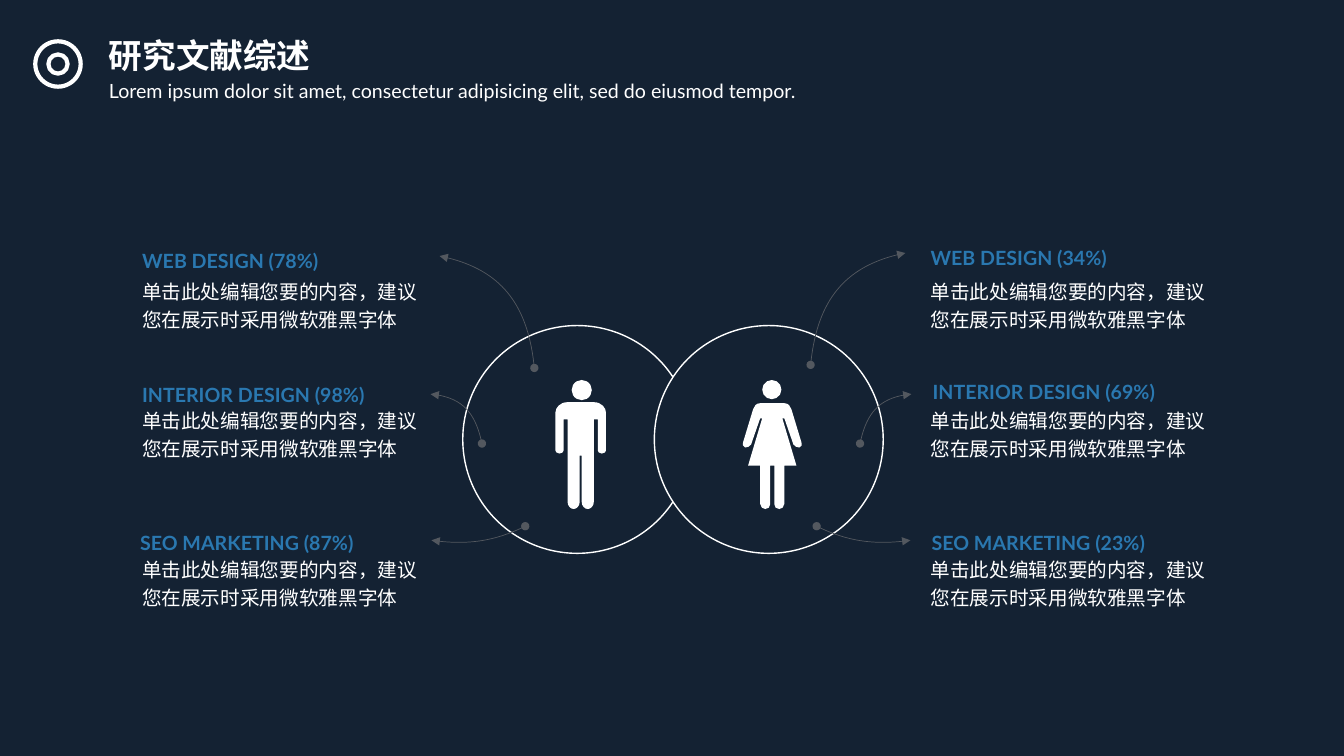
from dataclasses import dataclass
from lxml import etree
from pptx import Presentation
from pptx.dml.color import RGBColor
from pptx.enum.shapes import MSO_SHAPE
from pptx.enum.text import MSO_ANCHOR, MSO_AUTO_SIZE, PP_ALIGN
from pptx.oxml.ns import qn
from pptx.util import Inches, Pt

OVAL = MSO_SHAPE.OVAL
TOP, MIDDLE = MSO_ANCHOR.TOP, MSO_ANCHOR.MIDDLE
LEFT, NO_FIT = PP_ALIGN.LEFT, MSO_AUTO_SIZE.NONE


@dataclass(frozen=True)
class Theme:
    font: str = "Lato"
    navy: RGBColor = RGBColor(0x14, 0x22, 0x33)
    white: RGBColor = RGBColor(0xFF, 0xFF, 0xFF)
    blue: RGBColor = RGBColor(0x2A, 0x78, 0xB0)
    grey: RGBColor = RGBColor(0x53, 0x58, 0x5F)
    title: int = 24
    text: int = 14
    leading: float = 1.2


T = Theme()
WIDTH, HEIGHT = 13.33, 7.5
TITLE = "研究文献综述"
SUBTITLE = "Lorem ipsum dolor sit amet, consectetur adipisicing elit, sed do eiusmod tempor."
BODY = "单击此处编辑您要的内容，建议您在展示时采用微软雅黑字体"

ROW_TOPS = (2.73, 4.01, 5.49)
COLUMNS = (
    (1.41, (("WEB DESIGN (78%)", 1.28, 2.37),
            ("INTERIOR DESIGN (98%)", 1.28, 3.7),
            ("SEO MARKETING (87%)", 1.26, 5.17))),
    (9.23, (("WEB DESIGN (34%)", 9.1, 2.34),
            ("INTERIOR DESIGN (69%)", 9.12, 3.67),
            ("SEO MARKETING (23%)", 9.11, 5.17))),
)
BODY_SIZE, LABEL_SIZE = (2.76, 0.54), (2.66, 0.38)
LABEL_INSETS = (0.13, 0.07)

CIRCLES = ((4.59, 3.23, 2.27, 2.26), (6.49, 3.23, 2.27, 2.26))
HEADS = ((5.67, 3.77, 0.2, 0.2), (7.56, 3.77, 0.19, 0.19))
ICON_RINGS = ((0.35, 0.41, 0.45, 0.45), (0.48, 0.54, 0.19, 0.19))

HALF_BODIES = (
    (5.76, ((0.13, 3.99), (0.21, 3.99, 0.25, 4.05, 0.25, 4.09), (0.25, 4.47),
            (0.25, 4.48, 0.24, 4.5, 0.21, 4.5), (0.18, 4.5, 0.17, 4.48, 0.17, 4.47),
            (0.17, 4.16), (0.13, 4.16), (0.13, 4.98),
            (0.13, 5.02, 0.1, 5.05, 0.07, 5.05), (0.04, 5.05, 0.01, 5.02, 0.01, 4.98),
            (0.01, 4.52))),
    (7.66, ((0.12, 4), (0.16, 4, 0.18, 4.03, 0.19, 4.06), (0.29, 4.39),
            (0.3, 4.41, 0.29, 4.43, 0.27, 4.44), (0.25, 4.44, 0.22, 4.43, 0.21, 4.41),
            (0.12, 4.15), (0.1, 4.15), (0.24, 4.62), (0.12, 4.62), (0.12, 5),
            (0.12, 5.03, 0.09, 5.05, 0.07, 5.05), (0.04, 5.05, 0.02, 5.03, 0.02, 5),
            (0.02, 4.62))),
)
ARROWS = (
    (((5.3, 3.65), (5.24, 3.02, 4.93, 2.65, 4.36, 2.54)), 13.34, -0.03),
    (((4.78, 4.4), (4.72, 4.1, 4.55, 3.93, 4.27, 3.91)), 13.31, 0),
    (((5.21, 5.22), (4.93, 5.36, 4.62, 5.41, 4.28, 5.36)), 13.31, 0),
)


def pairs(seg):
    return list(zip(seg[::2], seg[1::2]))


def mirrored(segments, axis, shift=0):
    return [tuple(v for x, y in pairs(seg) for v in (axis - x, y + shift))
            for seg in segments]


def reversed_path(segments):
    points = [pt for seg in segments for pt in pairs(seg)][::-1]
    lengths = [1] + [len(seg) // 2 for seg in segments[:0:-1]]
    path = []
    for n in lengths:
        path.append(tuple(v for pt in points[:n] for v in pt))
        points = points[n:]
    return path


def paint(sp, fill=None, line=None, width=1):
    sp.shadow.inherit = False
    if fill is None:
        sp.fill.background()
    else:
        sp.fill.solid()
        sp.fill.fore_color.rgb = fill
    if line is None:
        sp.line.fill.background()
    else:
        sp.line.color.rgb = line
        sp.line.width = Pt(width)


def add_circle(shapes, box, **style):
    paint(shapes.add_shape(OVAL, *map(Inches, box)), **style)


def add_outline(shapes, segments, close, **style):
    points = [(Inches(x), Inches(y)) for seg in segments for x, y in pairs(seg)]
    builder = shapes.build_freeform(*points[0])
    builder.add_line_segments(points[1:], close=close)
    sp = builder.convert_to_shape()
    steps = iter(sp.element.findall(".//" + qn("a:lnTo")))
    for seg in segments[1:]:
        first = next(steps)
        if len(seg) == 6:
            first.tag_holder = None
            curve = etree.Element(qn("a:cubicBezTo"))
            first.addprevious(curve)
            for step in (first, next(steps), next(steps)):
                curve.append(step[0])
                step.getparent().remove(step)
    paint(sp, **style)
    return sp


def add_arrow(shapes, segments):
    sp = add_outline(shapes, segments, False, line=T.grey, width=0.5)
    ln = sp.element.spPr.find(qn("a:ln"))
    etree.SubElement(ln, qn("a:headEnd"), type="oval")
    etree.SubElement(ln, qn("a:tailEnd"), type="triangle")


def write(sp, text, size, color, bold=False, anchor=TOP, insets=(0.1, 0.05)):
    tf = sp.text_frame
    tf.word_wrap = True
    tf.auto_size = NO_FIT
    tf.vertical_anchor = anchor
    tf.margin_left = tf.margin_right = Inches(insets[0])
    tf.margin_top = tf.margin_bottom = Inches(insets[1])
    tf.text = text
    p = tf.paragraphs[0]
    p.alignment = LEFT
    p.line_spacing = T.leading
    p.space_before = Pt(0)
    p.font.name, p.font.size, p.font.bold = T.font, Pt(size), bold
    p.font.color.rgb = color
    return p


def place(sp, box):
    sp.left, sp.top, sp.width, sp.height = map(Inches, box)


def add_text(s, box, *args, **style):
    write(s.shapes.add_textbox(*map(Inches, box)), *args, **style)


def main():
    prs = Presentation()
    prs.slide_width, prs.slide_height = Inches(WIDTH), Inches(HEIGHT)
    s = prs.slides.add_slide(prs.slide_layouts[0])
    s.background.fill.solid()
    s.background.fill.fore_color.rgb = T.navy

    title, subtitle = s.shapes.title, s.placeholders[1]
    place(title, (0.98, 0.22, 2.9, 0.54))
    write(title, TITLE, T.title, T.white, bold=True)
    place(subtitle, (0.98, 0.69, 7.85, 0.36))
    write(subtitle, SUBTITLE, T.text, T.white).space_before = Pt(10)

    venn, people, icon = (s.shapes.add_group_shape().shapes for _ in range(3))
    for circle in CIRCLES:
        add_circle(venn, circle, fill=T.navy, line=T.white)
    for head in HEADS:
        add_circle(people, head, fill=T.white)
    for center, half in HALF_BODIES:
        left = mirrored(half, center)
        right = mirrored(mirrored(half, 0), center)
        add_outline(people, right + reversed_path(left), True, fill=T.white)
    for ring in ICON_RINGS:
        add_circle(icon, ring, line=T.white, width=3)

    for curve, axis, shift in ARROWS:
        add_arrow(s.shapes, curve)
        add_arrow(s.shapes, mirrored(curve, axis, shift))

    for left, labels in COLUMNS:
        for top, (label, label_left, label_top) in zip(ROW_TOPS, labels):
            add_text(s, (label_left, label_top, *LABEL_SIZE), label, T.text, T.blue,
                     bold=True, anchor=MIDDLE, insets=LABEL_INSETS)
            add_text(s, (left, top, *BODY_SIZE), BODY, T.text, T.white, insets=(0, 0))

    prs.save("out.pptx")


if __name__ == "__main__":
    main()
